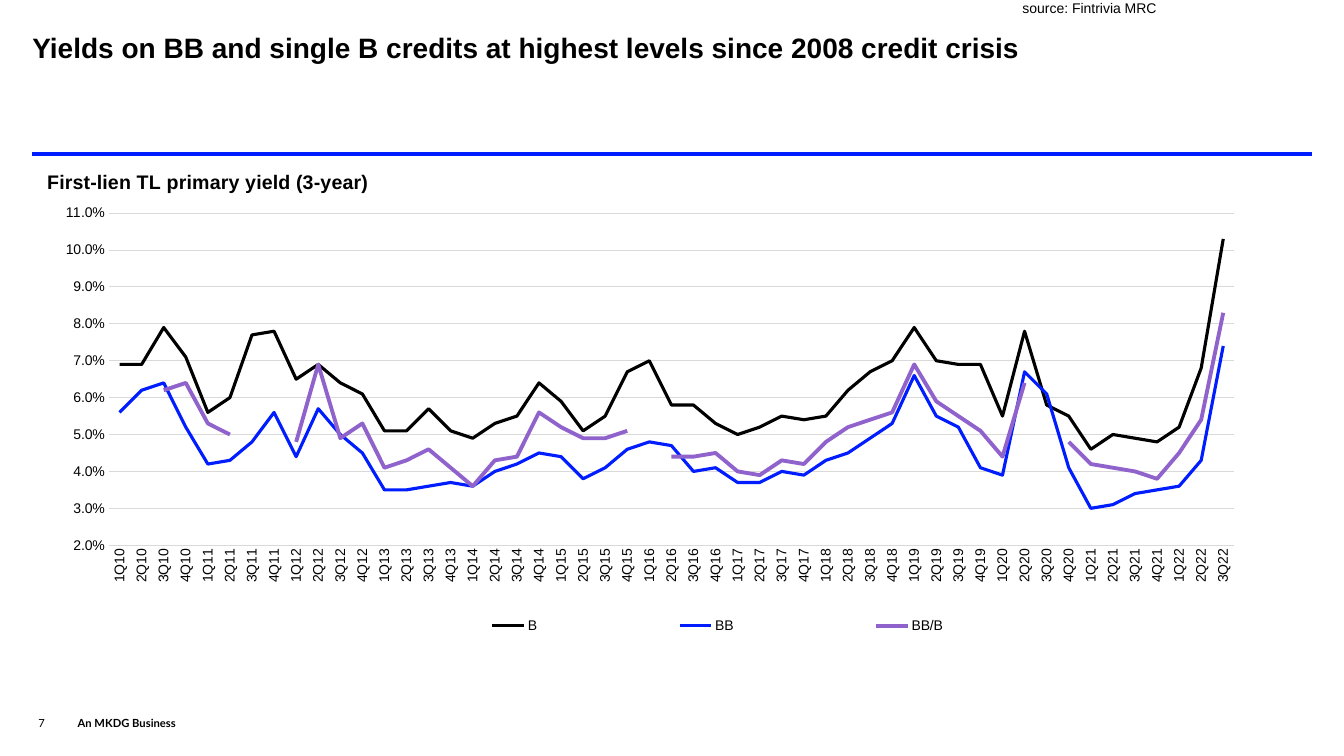
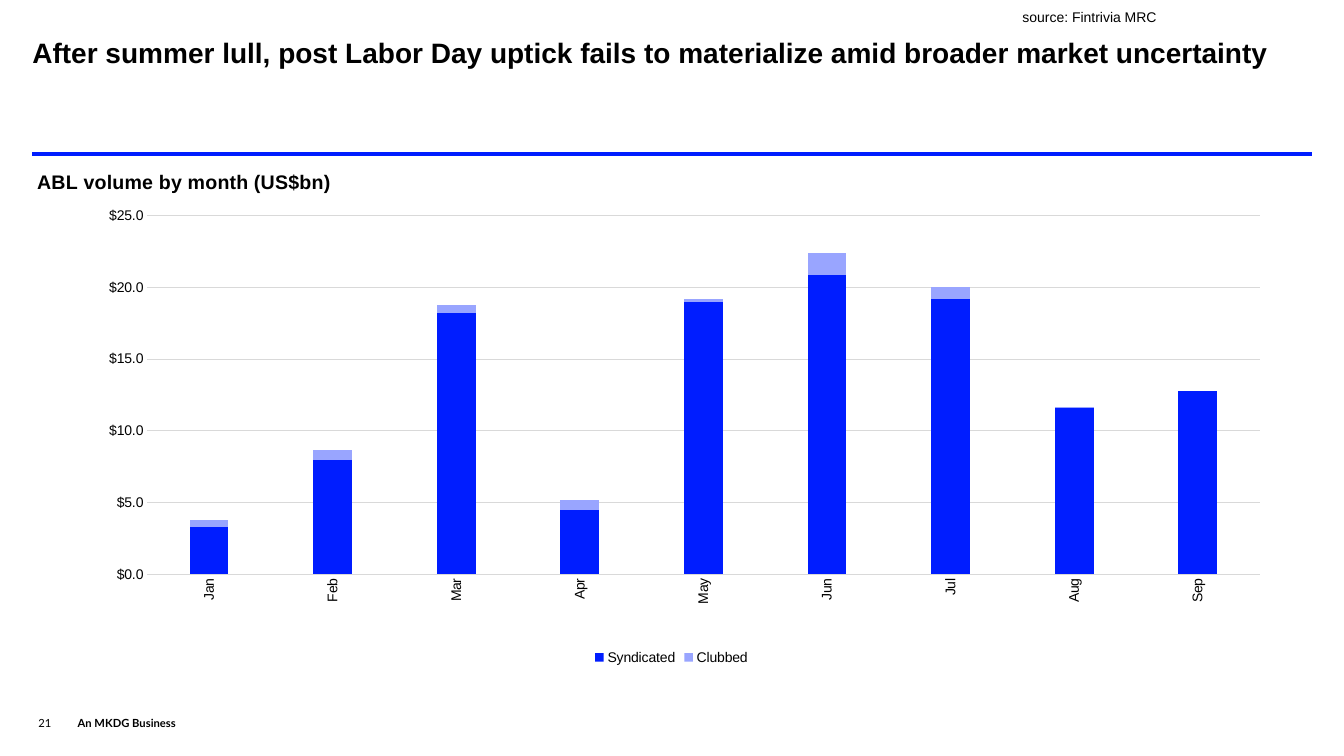
from lxml.etree import SubElement
from pptx import Presentation
from pptx.chart.data import CategoryChartData
from pptx.dml.color import RGBColor
from pptx.enum.chart import XL_CHART_TYPE, XL_LEGEND_POSITION, XL_TICK_MARK
from pptx.enum.shapes import MSO_CONNECTOR
from pptx.enum.text import MSO_ANCHOR, MSO_AUTO_SIZE, PP_ALIGN
from pptx.oxml.ns import qn
from pptx.util import Inches, Pt

# Shared colours and text formats
BLACK = RGBColor(0x00, 0x00, 0x00)
BLUE = RGBColor(0x00, 0x1D, 0xFF)
PALE_BLUE = RGBColor(0x99, 0xA5, 0xFF)
PURPLE = RGBColor(0x90, 0x63, 0xCC)
GRID_GREY = RGBColor(0xD9, 0xD9, 0xD9)

TITLE_FONT = {"name": "Arial", "size": Pt(20), "bold": True}
HEADING_FONT = {"name": "Arial", "size": Pt(14), "bold": True}
BODY_FONT = {"name": "Arial", "size": Pt(10), "bold": False}
NUMBER_FONT = {"name": "Lato", "size": Pt(8), "bold": False}
FOOTER_FONT = {"name": "Lato", "size": Pt(8), "bold": True}

SOURCE = "source: Fintrivia MRC"
FOOTER = "An MKDG Business"
LEFT, RIGHT, RULE_TOP = 0.32, 13.01, 1.53

# Chart data
QUARTERS = [f"{quarter}Q{year}" for year in range(10, 23) for quarter in range(1, 5)][:51]
YIELDS = [
    ("B", BLACK, 2.25, [
        0.069, 0.069, 0.079, 0.071, 0.056, 0.06, 0.077, 0.078, 0.065, 0.069, 0.064, 0.061,
        0.051, 0.051, 0.057, 0.051, 0.049, 0.053, 0.055, 0.064, 0.059, 0.051, 0.055, 0.067,
        0.07, 0.058, 0.058, 0.053, 0.05, 0.052, 0.055, 0.054, 0.055, 0.062, 0.067, 0.07,
        0.079, 0.07, 0.069, 0.069, 0.055, 0.078, 0.058, 0.055, 0.046, 0.05, 0.049, 0.048,
        0.052, 0.068, 0.103]),
    ("BB", BLUE, 2.25, [
        0.056, 0.062, 0.064, 0.052, 0.042, 0.043, 0.048, 0.056, 0.044, 0.057, 0.05, 0.045,
        0.035, 0.035, 0.036, 0.037, 0.036, 0.04, 0.042, 0.045, 0.044, 0.038, 0.041, 0.046,
        0.048, 0.047, 0.04, 0.041, 0.037, 0.037, 0.04, 0.039, 0.043, 0.045, 0.049, 0.053,
        0.066, 0.055, 0.052, 0.041, 0.039, 0.067, 0.061, 0.041, 0.03, 0.031, 0.034, 0.035,
        0.036, 0.043, 0.074]),
    ("BB/B", PURPLE, 2.75, [
        None, None, 0.062, 0.064, 0.053, 0.05, None, None, 0.048, 0.069, 0.049, 0.053,
        0.041, 0.043, 0.046, 0.041, 0.036, 0.043, 0.044, 0.056, 0.052, 0.049, 0.049, 0.051,
        None, 0.044, 0.044, 0.045, 0.04, 0.039, 0.043, 0.042, 0.048, 0.052, 0.054, 0.056,
        0.069, 0.059, 0.055, 0.051, 0.044, 0.064, None, 0.048, 0.042, 0.041, 0.04, 0.038,
        0.045, 0.054, 0.083]),
]
MONTHS = ["Jan", "Feb", "Mar", "Apr", "May", "Jun", "Jul", "Aug", "Sep"]
VOLUMES = [
    ("Syndicated", BLUE, [3.3, 8, 18.2, 4.5, 19, 20.9, 19.2, 11.6, 12.8]),
    ("Clubbed", PALE_BLUE, [0.5, 0.7, 0.6, 0.7, 0.2, 1.5, 0.8, 0.1, None]),
]


def set_values(target, values):
    for name, value in values.items():
        setattr(target, name, value)


def set_font(font, values):
    set_values(font, values)
    font.color.rgb = BLACK


def fill_text(shape, text, font, anchor=MSO_ANCHOR.TOP):
    frame = shape.text_frame
    set_values(frame, {
        "margin_left": 0, "margin_top": 0, "margin_right": 0, "margin_bottom": 0,
        "word_wrap": True, "auto_size": MSO_AUTO_SIZE.NONE, "vertical_anchor": anchor,
    })
    para = frame.paragraphs[0]
    para.alignment = PP_ALIGN.LEFT
    span = para.add_run()
    span.text = text
    set_font(span.font, font)
    return para


def add_text(page, box, text, font, anchor=MSO_ANCHOR.TOP):
    shape = page.shapes.add_textbox(*map(Inches, box))
    fill_text(shape, text, font, anchor)


def add_page(deck, title, title_box, source_box, number):
    """Add a page with its title, rule, source line and footer."""
    page = deck.slides.add_slide(deck.slide_layouts[5])
    # Title
    heading = page.shapes.title
    for name, length in zip(("left", "top", "width", "height"), title_box):
        setattr(heading, name, Inches(length))
    fill_text(heading, title, TITLE_FONT).line_spacing = 0.9
    # Rule under the title
    rule = page.shapes.add_connector(
        MSO_CONNECTOR.STRAIGHT, *map(Inches, (LEFT, RULE_TOP, RIGHT, RULE_TOP)))
    rule.line.color.rgb = BLUE
    rule.line.width = Pt(3)
    SubElement(rule._element.spPr, qn("a:effectLst"))
    # Source and footer
    add_text(page, source_box, SOURCE, BODY_FONT)
    add_text(page, (0.38, 7.04, 0.39, 0.2), number, NUMBER_FONT, MSO_ANCHOR.BOTTOM)
    add_text(page, (0.77, 7.04, 1.73, 0.2), FOOTER, FOOTER_FONT, MSO_ANCHOR.BOTTOM)
    return page


def set_layout(element, index, x, y, w=None, h=None):
    """Place a chart part by fractions of the chart's size."""
    for old in element.findall(qn("c:layout")):
        element.remove(old)
    layout = element.makeelement(qn("c:layout"), {})
    element.insert(index, layout)
    manual = SubElement(layout, qn("c:manualLayout"))
    entries = {"xMode": "edge", "yMode": "edge", "x": x, "y": y, "w": w, "h": h}
    if element.tag == qn("c:plotArea"):
        entries = {"layoutTarget": "inner", **entries}
    for name, value in entries.items():
        if value is not None:
            SubElement(manual, qn(f"c:{name}")).set("val", str(value))


def add_chart(page, box, kind, heading, categories, series, number_format, scale, plot):
    """Add a chart with heading, axes and legend in the shared style."""
    data = CategoryChartData(number_format=number_format)
    data.categories = categories
    for name, *_, values in series:
        data.add_series(name, values)
    chart = page.shapes.add_chart(kind, *map(Inches, box), data).chart
    set_font(chart.font, BODY_FONT)

    # Heading and plot area
    chart.has_title = True
    span = chart.chart_title.text_frame.paragraphs[0].add_run()
    span.text = heading
    set_font(span.font, HEADING_FONT)
    chart.chart_title.include_in_layout = False
    set_layout(chart.chart_title._element, 1, 0.001, 0)
    set_layout(chart._chartSpace.chart.plotArea, 0, *plot)
    chart.plots[0].vary_by_categories = False

    # Axes
    category_axis, value_axis = chart.category_axis, chart.value_axis
    for axis in (category_axis, value_axis):
        axis.major_tick_mark = axis.minor_tick_mark = XL_TICK_MARK.NONE
        set_font(axis.tick_labels.font, BODY_FONT)
    category_axis.has_major_gridlines = False
    category_axis._element.find(qn("c:txPr")).find(qn("a:bodyPr")).set("rot", "-5400000")
    value_axis.has_major_gridlines = True
    for line in (category_axis.format.line, value_axis.major_gridlines.format.line):
        line.color.rgb = GRID_GREY
        line.width = Pt(0.75)
    value_axis.format.line.fill.background()
    set_values(value_axis, scale)
    value_axis.tick_labels.number_format = number_format
    value_axis.tick_labels.number_format_is_linked = False

    # Legend
    chart.has_legend = True
    chart.legend.position = XL_LEGEND_POSITION.BOTTOM
    chart.legend.include_in_layout = False
    set_font(chart.legend.font, BODY_FONT)
    return chart


def add_yield_chart(page, box):
    scale = {"minimum_scale": 0.02, "maximum_scale": 0.11, "major_unit": 0.01}
    chart = add_chart(page, box, XL_CHART_TYPE.LINE, "First-lien TL primary yield (3-year)",
                      QUARTERS, YIELDS, "0.0%", scale, (0.053, 0.095, 0.902, 0.659))
    set_layout(chart.legend._element, 1, 0.25, 0.884, 0.582, 0.06)
    for line, (_, color, width, _) in zip(chart.plots[0].series, YIELDS):
        line.smooth = False
        line.format.line.color.rgb = color
        line.format.line.width = Pt(width)


def add_volume_chart(page, box):
    scale = {"minimum_scale": 0, "maximum_scale": 25, "major_unit": 5}
    chart = add_chart(page, box, XL_CHART_TYPE.COLUMN_STACKED, "ABL volume by month (US$bn)",
                      MONTHS, VOLUMES, '"$"#,##0.0', scale, (0.09, 0.1, 0.87, 0.712))
    set_values(chart.plots[0], {"gap_width": 219, "overlap": 100})
    for column, (_, color, _) in zip(chart.plots[0].series, VOLUMES):
        column.format.fill.solid()
        column.format.fill.fore_color.rgb = color


def main():
    deck = Presentation()
    deck.slide_width, deck.slide_height = Inches(13.33), Inches(7.5)

    page = add_page(
        deck, "Yields on BB and single B credits at highest levels since 2008 credit crisis",
        (LEFT, 0.34, 12.68, 0.39), (10.14, 0, 3.19, 0.27), "7")
    add_yield_chart(page, (0.42, 1.64, 12.38, 5))

    page = add_page(
        deck, "After summer lull, post Labor Day uptick fails to materialize "
        "amid broader market uncertainty",
        (LEFT, 0.39, 12.68, 0.53), (10.14, 0.08, 3.19, 0.31), "21")
    add_volume_chart(page, (LEFT, 1.64, 12.68, 5))

    deck.save("out.pptx")


if __name__ == "__main__":
    main()
